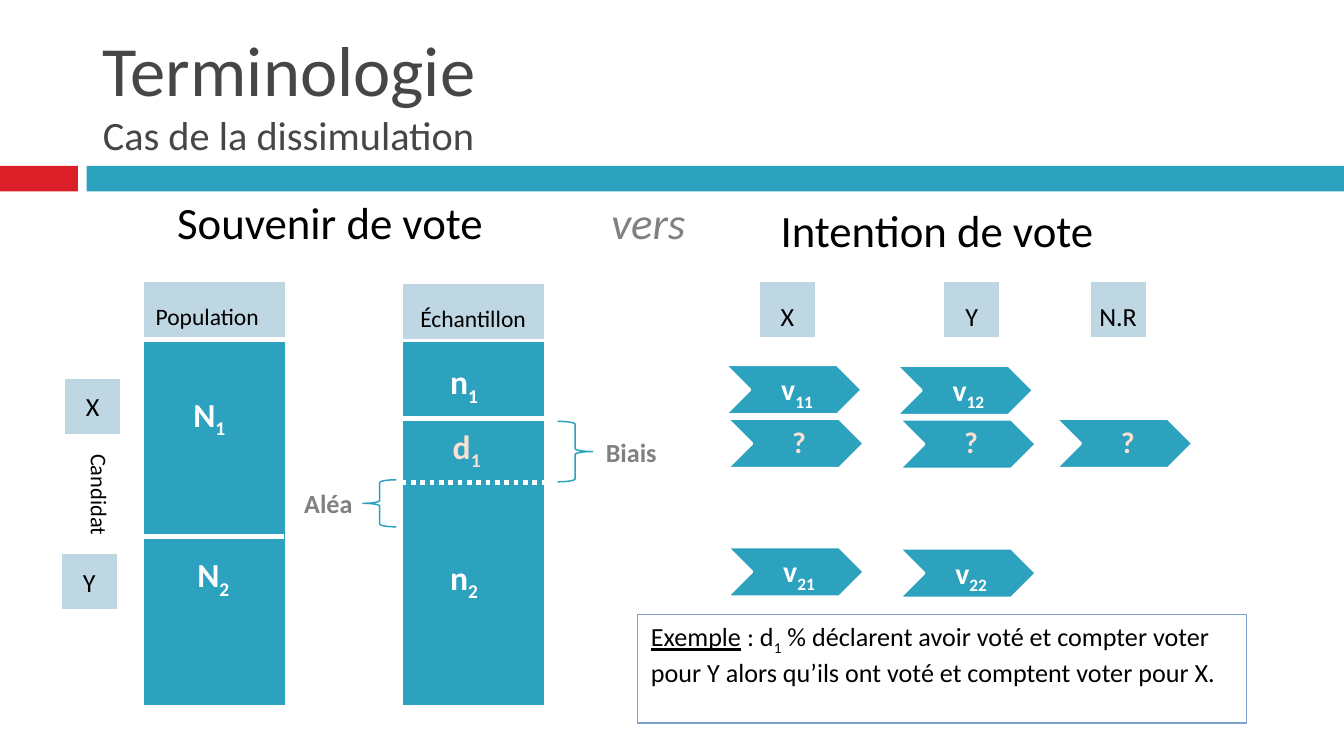
from pptx import Presentation
from pptx.dml.color import RGBColor
from pptx.enum.dml import MSO_LINE
from pptx.enum.shapes import MSO_CONNECTOR, MSO_SHAPE
from pptx.enum.text import MSO_ANCHOR, PP_ALIGN
from pptx.oxml.ns import qn
from pptx.util import Inches, Pt
from lxml import etree

RECT, CHEVRON = MSO_SHAPE.RECTANGLE, MSO_SHAPE.CHEVRON
LBRACE, RBRACE = MSO_SHAPE.LEFT_BRACE, MSO_SHAPE.RIGHT_BRACE
STRAIGHT, DOTS = MSO_CONNECTOR.STRAIGHT, MSO_LINE.ROUND_DOT
LEFT, CENTER = PP_ALIGN.LEFT, PP_ALIGN.CENTER
TOP, MIDDLE, BOTTOM = MSO_ANCHOR.TOP, MSO_ANCHOR.MIDDLE, MSO_ANCHOR.BOTTOM


class Theme:
    font = "Calibri"
    teal, red, pale, peach = "2DA2BF", "DA1F28", "BED7E2", "FBE0D1"
    white, black, gray, dark, blue = "FFFFFF", "000000", "808080", "464646", "7DA0D0"
    title, sub, head, bar, vote = 37.8, 21.6, 24, 18, 16
    body, name, side = 14, 12.6, 12
    edge, rule, thin, brace = 1.5, 2.5, 0.75, 0.79


deck = Presentation()
deck.slide_width = Inches(10)
deck.slide_height = deck.slide_width * 9 // 16
COL, ROW = deck.slide_width / 100, deck.slide_height / 56.25
slide = deck.slides.add_slide(deck.slide_layouts[5])
shapes = slide.shapes


def form(kind, x, y, w, h, fill=None, line=None, width=Theme.edge):
    """Add a shape, or a text box when kind is None, placed in grid units."""
    box = [int(v) for v in (x * COL, y * ROW, w * COL, h * ROW)]
    if kind is None:
        item = shapes.add_textbox(*box)
        item.text_frame.word_wrap = True
        return item
    item = shapes.add_shape(kind, *box)
    item.shadow.inherit = False
    if fill:
        item.fill.solid()
        item.fill.fore_color.rgb = RGBColor.from_string(fill)
    else:
        item.fill.background()
    if line:
        item.line.color.rgb = RGBColor.from_string(line)
        item.line.width = Pt(width)
    else:
        item.line.fill.background()
    return item


def write(item, text, size, color=Theme.black, bold=False, align=LEFT, anchor=TOP):
    """Write runs into the first paragraph; every second part between "_" is a subscript."""
    item.text_frame.vertical_anchor = anchor
    para = item.text_frame.paragraphs[0]
    para.alignment = align
    for k, part in enumerate(text.split("_")):
        run = para.add_run()
        run.text = part
        run.font.name, run.font.size, run.font.bold = Theme.font, Pt(size), bold
        run.font.color.rgb = RGBColor.from_string(color)
        if k % 2:
            run.font._element.set("baseline", "-25000")
    return para


# Title and band
form(RECT, 0, 12.35, 5.8, 1.9, Theme.red)
form(RECT, 6.45, 12.35, 93.55, 1.9, Theme.teal)
title = shapes.title
title.left, title.top = int(6.65 * COL), int(1.3 * ROW)
title.width, title.height = int(89.2 * COL), int(11 * ROW)
para = write(title, "Terminologie", Theme.title, Theme.dark, anchor=BOTTOM)
para.add_line_break()
write(title, "Cas de la dissimulation", Theme.sub, Theme.dark, anchor=BOTTOM)

# Headings
for text, x, y, w, color in (
    ("Souvenir de vote", 12.2, 14, 32.3, Theme.black),
    ("vers", 44.5, 14, 8.7, Theme.gray),
    ("Intention de vote", 57.1, 14.6, 31.7, Theme.black),
):
    para = write(form(None, x, y, w, 5), text, Theme.head, color)
    para.runs[0].font.italic = text == "vers"

# Bars and their names
for text, x, y, align in (("Population", 10.6, 20.9, LEFT), ("Échantillon", 29.85, 21, CENTER)):
    form(RECT, x, 25.35, 10.7, 27.2, Theme.teal, Theme.white)
    cell = form(RECT, x, y, 10.7, 4.3, Theme.pale, Theme.white)
    cell.text_frame.margin_bottom = Inches(0.06)
    write(cell, text, Theme.name, align=align, anchor=BOTTOM)

# Candidate and answer squares
for text, x, y, anchor in (
    ("X", 4.75, 28.1, MIDDLE), ("Y", 4.5, 41.15, MIDDLE),
    ("X", 56.45, 20.9, BOTTOM), ("Y", 70.15, 20.9, BOTTOM), ("N.R", 81.05, 20.9, BOTTOM),
):
    cell = form(RECT, x, y, 4.3, 4.3, Theme.pale, Theme.white)
    cell.text_frame.word_wrap = False
    write(cell, text, Theme.body, align=CENTER, anchor=anchor)
side = form(None, 4.6, 32.8, 4.4, 8.1)
side.text_frame._txBody.bodyPr.set("vert", "vert")
write(side, "Candidat", Theme.side).line_spacing = Pt(15)

# Splits within the bars
for x, y, dash in ((10.4, 39.9, None), (29.9, 31.15, None), (29.9, 35.9, DOTS)):
    rule = shapes.add_connector(
        STRAIGHT, int(x * COL), int(y * ROW), int((x + 10.7) * COL), int(y * ROW))
    rule.line.color.rgb = RGBColor.from_string(Theme.white)
    rule.line.width = Pt(Theme.rule)
    if dash:
        rule.line.dash_style = dash
    etree.SubElement(rule._element.spPr, qn("a:effectLst"))

# Braces, then labels in and beside the bars
form(LBRACE, 27, 35.7, 2.5, 3.5, None, Theme.teal, Theme.brace)
form(RBRACE, 41.5, 31.35, 2.6, 4.5, None, Theme.teal, Theme.brace)
for text, x, y, w, size, color in (
    ("N_1", 13.4, 28.8, 4.8, Theme.bar, Theme.white),
    ("N_2", 13.7, 40.75, 4.8, Theme.bar, Theme.white),
    ("n_1", 32.5, 26.4, 4.5, Theme.bar, Theme.white),
    ("d_1", 32.7, 31.2, 4.5, Theme.bar, Theme.peach),
    ("n_2", 32.5, 40.95, 4.5, Theme.bar, Theme.white),
    ("Aléa", 21.65, 35.8, 6.2, Theme.body, Theme.gray),
    ("Biais", 44.1, 31.95, 6.7, Theme.body, Theme.gray),
):
    label = form(None, x, y, w, 4 if size == Theme.bar else 3.4)
    label.text_frame.word_wrap = False
    write(label, text, size, color, True)

# Vote arrows
for text, x, y in (
    ("v_11", 53.95, 27.15), ("v_12", 66.7, 27.2),
    ("?", 54.1, 31.15), ("?", 66.9, 31.2), ("?", 78.55, 31.15),
    ("v_21", 54.1, 40.7), ("v_22", 66.9, 40.8),
):
    arrow = form(CHEVRON, x, y, 10.2, 3.7, Theme.teal, Theme.white)
    frame = arrow.text_frame
    frame.margin_left = Inches(0.07)
    frame.margin_top = frame.margin_right = frame.margin_bottom = Inches(0.02)
    color = Theme.peach if text == "?" else Theme.white
    write(arrow, text, Theme.vote, color, True, CENTER, MIDDLE).line_spacing = 0.9

# Example
note = form(RECT, 47.45, 45.7, 45.3, 8.1, None, Theme.blue, Theme.thin)
para = write(note, "Exemple", Theme.body)
para.runs[0].font.underline = True
write(note, " : d_1_ % déclarent avoir voté et compter voter pour Y "
      "alors qu’ils ont voté et comptent voter pour X.", Theme.body)

deck.save("out.pptx")
